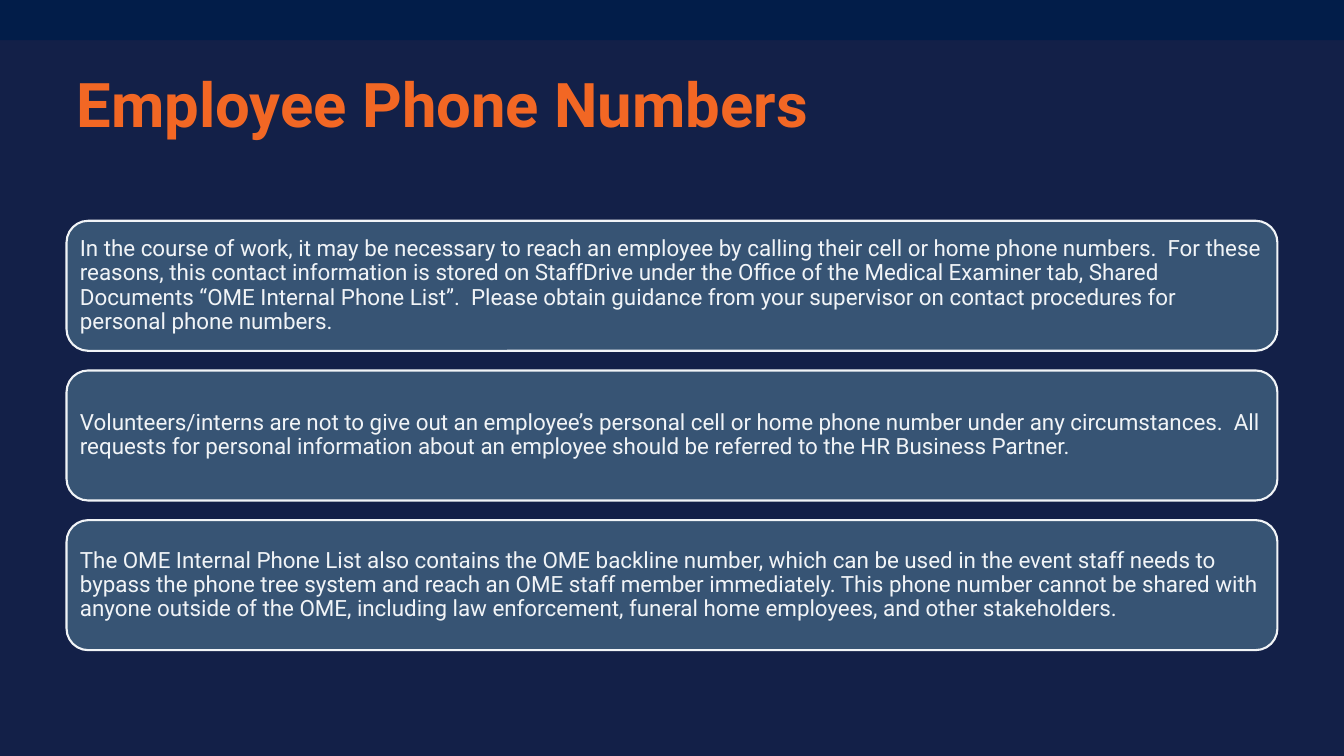
from pptx import Presentation
from pptx.dml.color import RGBColor
from pptx.enum.shapes import MSO_SHAPE
from pptx.enum.text import MSO_ANCHOR, PP_ALIGN
from pptx.util import Inches, Pt

RECTANGLE = MSO_SHAPE.RECTANGLE
ROUNDED = MSO_SHAPE.ROUNDED_RECTANGLE
MIDDLE = MSO_ANCHOR.MIDDLE
LEFT = PP_ALIGN.LEFT

FONT = "Roboto"
COLORS = {
    "background": "132048",
    "band": "021D49",
    "title": "F26724",
    "card": "375474",
    "light": "F1F4F7",
}

CARD_LEFT, CARD_TOP = 0.66, 2.19
CARD_WIDTH, CARD_HEIGHT = 12.01, 1.29
CARD_STEP = 1.485
CARD_MARGIN = 0.07

CARD_TEXTS = [
    "In the course of work, it may be necessary to reach an employee by calling "
    "their cell or home phone numbers.  For these reasons, this contact information "
    "is stored on StaffDrive under the Office of the Medical Examiner tab, Shared "
    "Documents “OME Internal Phone List”.  Please obtain guidance from your "
    "supervisor on contact procedures for personal phone numbers.",
    "Volunteers/interns are not to give out an employee’s personal cell or home "
    "phone number under any circumstances.  All requests for personal information "
    "about an employee should be referred to the HR Business Partner.",
    "The OME Internal Phone List also contains the OME backline number, which can "
    "be used in the event staff needs to bypass the phone tree system and reach an "
    "OME staff member immediately. This phone number cannot be shared with anyone "
    "outside of the OME, including law enforcement, funeral home employees, and "
    "other stakeholders.",
]


def color(name):
    return RGBColor.from_string(COLORS[name])


def write(shape, text, size, color_name, bold=False):
    """Put one left-aligned, vertically centred paragraph in the shape."""
    frame = shape.text_frame
    frame.word_wrap = True
    frame.vertical_anchor = MIDDLE
    paragraph = frame.paragraphs[0]
    paragraph.text = text
    paragraph.alignment = LEFT
    paragraph.line_spacing = 0.9
    paragraph.font.name = FONT
    paragraph.font.size = Pt(size)
    paragraph.font.bold = bold
    paragraph.font.color.rgb = color(color_name)


deck = Presentation()
deck.slide_width = Inches(13.33)
deck.slide_height = Inches(7.5)
page = deck.slides.add_slide(deck.slide_layouts[6])
page.background.fill.solid()
page.background.fill.fore_color.rgb = color("background")

band = page.shapes.add_shape(RECTANGLE, 0, 0, deck.slide_width, Inches(0.4))
band.shadow.inherit = False
band.fill.solid()
band.fill.fore_color.rgb = color("band")
band.line.fill.background()

title = page.shapes.add_textbox(Inches(0.66), Inches(0.44), Inches(11.5), Inches(1.26))
write(title, "Employee Phone Numbers", 44, "title", bold=True)

for index, text in enumerate(CARD_TEXTS):
    card = page.shapes.add_shape(
        ROUNDED,
        Inches(CARD_LEFT),
        Inches(CARD_TOP + index * CARD_STEP),
        Inches(CARD_WIDTH),
        Inches(CARD_HEIGHT),
    )
    card.shadow.inherit = False
    card.fill.solid()
    card.fill.fore_color.rgb = color("card")
    card.line.color.rgb = color("light")
    card.line.width = Pt(1.5)
    frame = card.text_frame
    frame.margin_left = frame.margin_right = Inches(CARD_MARGIN)
    frame.margin_top = frame.margin_bottom = Inches(CARD_MARGIN)
    write(card, text, 16, "light")

deck.save("out.pptx")
